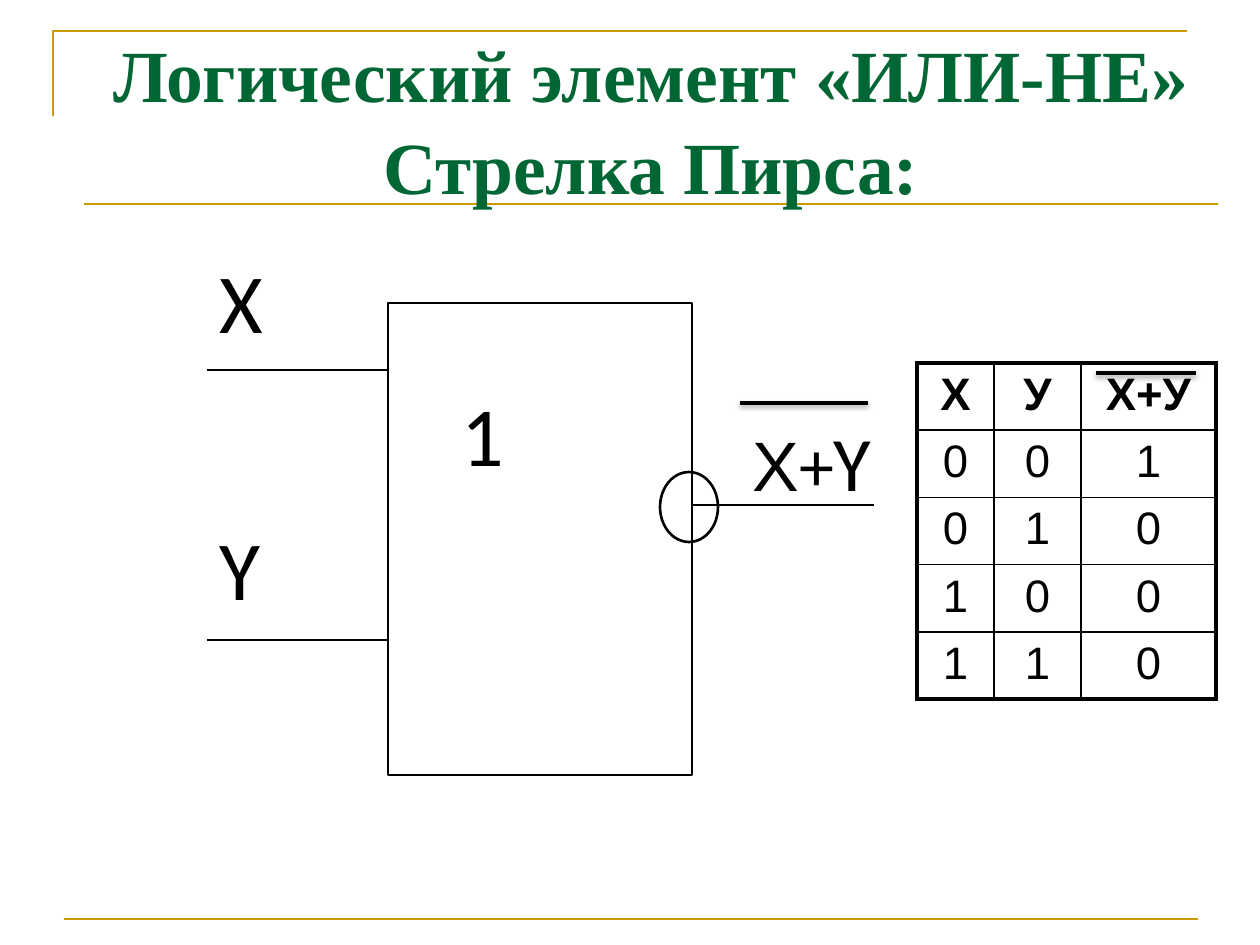
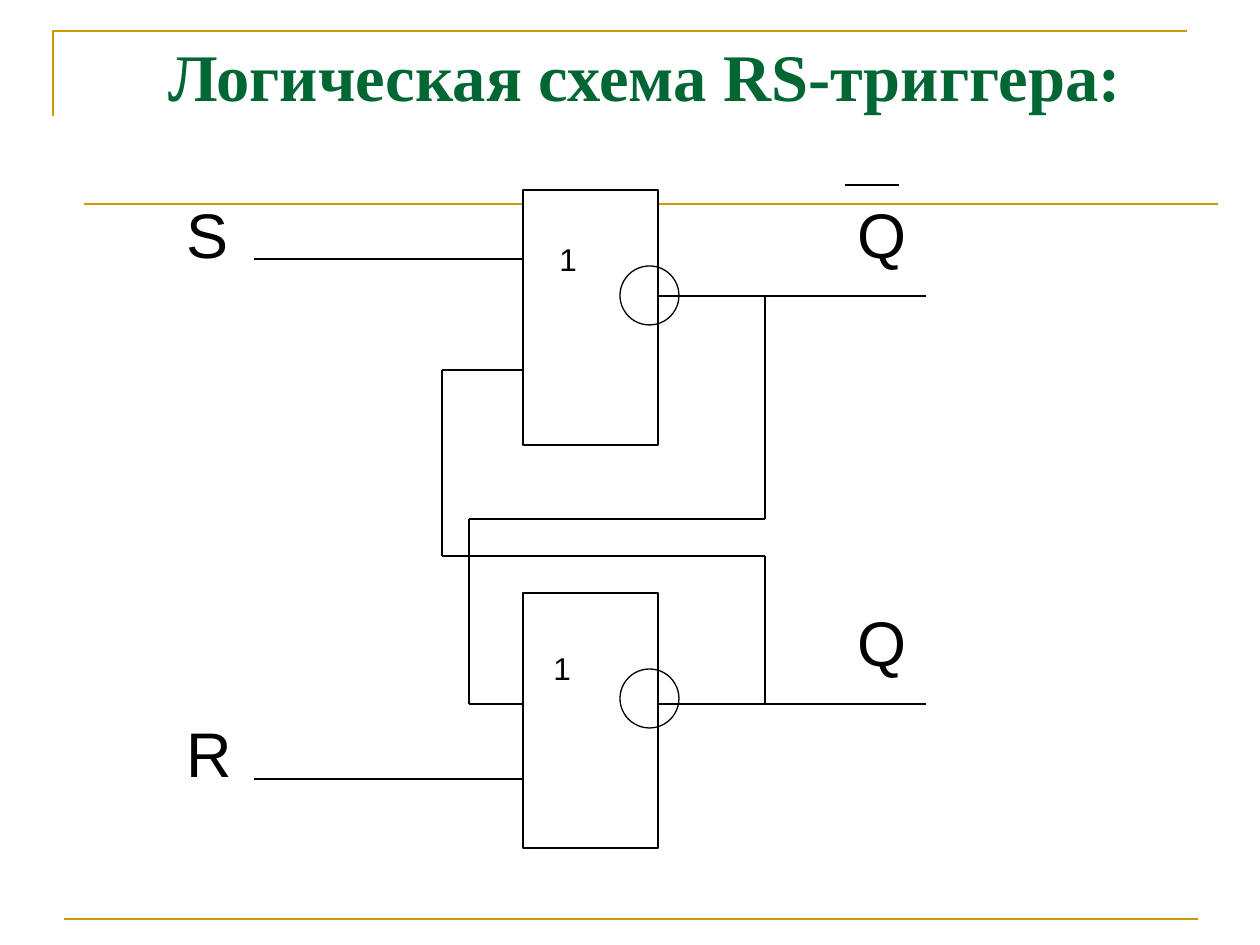
from itertools import pairwise

from lxml import etree
from pptx import Presentation
from pptx.dml.color import RGBColor
from pptx.enum.shapes import MSO_CONNECTOR, MSO_SHAPE
from pptx.enum.text import MSO_ANCHOR, PP_ALIGN
from pptx.oxml.ns import qn
from pptx.util import Emu, Pt

STRAIGHT = MSO_CONNECTOR.STRAIGHT
RECTANGLE, OVAL = MSO_SHAPE.RECTANGLE, MSO_SHAPE.OVAL
LEFT, CENTER, TOP = PP_ALIGN.LEFT, PP_ALIGN.CENTER, MSO_ANCHOR.TOP

SCALE = 914400 / 126
GOLD, GREEN, BLACK, WHITE = "CC9900", "006633", "000000", "FFFFFF"
SERIF, SANS, CALIBRI = "Times New Roman", "Arial", "Calibri"


def px(length):
    return Emu(round(length * SCALE))


def color(value):
    return RGBColor.from_string(value)


def style_run(run, size, font, hue=BLACK, bold=False):
    run.font.size = Pt(size)
    run.font.name = font
    run.font.bold = bold
    run.font.color.rgb = color(hue)


def add_line(slide, start, end, hue=BLACK, width=0.75, shadow=False):
    line = slide.shapes.add_connector(STRAIGHT, *map(px, (*start, *end)))
    line.line.color.rgb = color(hue)
    line.line.width = Pt(width)
    effects = etree.SubElement(line._element.spPr, qn("a:effectLst"))
    if shadow:
        outer = etree.SubElement(effects, qn("a:outerShdw"), blurRad="40000",
                                 dist="20000", dir="5400000", rotWithShape="0")
        black = etree.SubElement(outer, qn("a:srgbClr"), val=BLACK)
        etree.SubElement(black, qn("a:alpha"), val="38000")


def add_wire(slide, *points):
    for start, end in pairwise(points):
        add_line(slide, start, end)


def add_outline(slide, preset, box, fill=None, width=0.75):
    outline = slide.shapes.add_shape(preset, *map(px, box))
    outline.shadow.inherit = False
    outline.line.color.rgb = color(BLACK)
    outline.line.width = Pt(width)
    if fill:
        outline.fill.solid()
        outline.fill.fore_color.rgb = color(fill)
    else:
        outline.fill.background()


def add_label(slide, box, *parts):
    frame = slide.shapes.add_textbox(*map(px, box)).text_frame
    frame.word_wrap = True
    frame.margin_top = px(6 + parts[0][1] // 7)
    for text, size, font in parts:
        run = frame.paragraphs[0].add_run()
        run.text = text
        style_run(run, size, font)


def add_frame(slide):
    corner = slide.shapes.build_freeform(53, 116, scale=SCALE)
    corner.add_line_segments([(53, 31), (1187, 31)], close=False)
    bracket = corner.convert_to_shape()
    bracket.shadow.inherit = False
    bracket.fill.background()
    bracket.line.color.rgb = color(GOLD)
    bracket.line.width = Pt(1.5)
    for left, top in ((64, 919), (84, 204)):
        add_line(slide, (left, top), (left + 1134, top), GOLD, 1.5)


def add_title(slide, box, lines, size, align):
    frame = slide.shapes.add_textbox(*map(px, box)).text_frame
    frame.word_wrap = True
    frame.vertical_anchor = TOP
    frame.margin_top = px(16)
    frame.text = "\n".join(lines)
    for number, paragraph in enumerate(frame.paragraphs):
        paragraph.alignment = align
        paragraph.space_before = Pt(2 if number else 0)
        paragraph._p.get_or_add_pPr().set("indent", str(px(48)))
        style_run(paragraph.runs[0], size, SERIF, GREEN, True)


def add_pierce_gate(slide, left, top):
    def at(x, y):
        return left + x, top + y

    add_outline(slide, RECTANGLE, (*at(181, 66), 304, 472), WHITE)
    for y in (133, 403):
        add_wire(slide, at(0, y), at(181, y))
    add_wire(slide, at(485, 268), at(667, 268))
    for text, x, y in (("1", 242, 133), ("X", 0, 0), ("Y", 0, 268)):
        add_label(slide, (*at(x, y), 182, 269), (text, 48, CALIBRI))
    add_label(slide, (*at(533, 166), 182, 269),
              ("X", 40, SANS), ("+", 40, CALIBRI), ("Y", 44, CALIBRI))
    add_outline(slide, OVAL, (*at(453, 235), 58, 70), width=1.5)
    add_line(slide, at(533, 166), at(661, 166), width=2, shadow=True)


def add_border(cell, side, width):
    border = etree.SubElement(cell._tc.get_or_add_tcPr(), qn(f"a:ln{side}"),
                              w=str(Pt(width)))
    fill = etree.SubElement(border, qn("a:solidFill"))
    etree.SubElement(fill, qn("a:srgbClr"), val=BLACK)


def add_truth_table(slide, left, top):
    header = ("Х", "У", "Х+У")
    rows = [header] + [(str(x), str(y), str(int(not (x or y))))
                       for x in (0, 1) for y in (0, 1)]
    widths = (77, 87, 135)
    table = slide.shapes.add_table(len(rows), len(header), px(left), px(top),
                                   px(sum(widths)), px(67 * len(rows))).table
    table.first_row = table.horz_banding = False
    for column, width in zip(table.columns, widths):
        column.width = px(width)
    last_row, last_column = len(rows) - 1, len(header) - 1
    for r, row in enumerate(rows):
        for c, text in enumerate(row):
            cell = table.cell(r, c)
            cell.text = text
            paragraph = cell.text_frame.paragraphs[0]
            paragraph.alignment = CENTER
            paragraph.space_before = Pt(1)
            style_run(paragraph.runs[0], 26, SANS, bold=r == 0)
            edges = {"L": c == 0, "R": c == last_column,
                     "T": r == 0, "B": r == last_row}
            for side, outer in edges.items():
                add_border(cell, side, 2.25 if outer else 1)
            cell.fill.background()
    add_line(slide, (left + 179, top + 10), (left + 279, top + 10),
             width=2, shadow=True)


def add_nor_gate(slide, left, top, digit_x, digit_y):
    add_outline(slide, RECTANGLE, (left, top, 135, 255), WHITE)
    add_outline(slide, OVAL, (left + 97, top + 76, 59, 59))
    add_label(slide, (left + digit_x, top + digit_y, 49, 50), ("1", 18, SANS))


def add_trigger(slide, left, top):
    def at(x, y):
        return left + x, top + y

    add_nor_gate(slide, *at(349, 5), 24, 42)
    add_nor_gate(slide, *at(349, 408), 18, 48)
    for y in (74, 594):
        add_wire(slide, at(80, y), at(349, y))
    for y in (111, 519):
        add_wire(slide, at(484, y), at(752, y))
    add_wire(slide, at(349, 185), at(268, 185), at(268, 371),
             at(591, 371), at(591, 519))
    add_wire(slide, at(349, 519), at(295, 519), at(295, 334),
             at(591, 334), at(591, 111))
    for text, x, y in (("S", 0, 0), ("R", 0, 519), ("Q", 671, 0), ("Q", 671, 408)):
        add_label(slide, (*at(x, y), 107, 149), (text, 36, SANS))
    add_wire(slide, at(671, 0), at(725, 0))


def add_framed_slide(deck):
    slide = deck.slides.add_slide(deck.slide_layouts[6])
    add_frame(slide)
    return slide


def main():
    deck = Presentation()
    deck.slide_width, deck.slide_height = px(1260), px(945)

    pierce = add_framed_slide(deck)
    add_title(pierce, (29, 13, 1196, 190),
              ("Логический элемент «ИЛИ-НЕ»", "Стрелка Пирса:"), 42, CENTER)
    add_pierce_gate(pierce, 207, 237)
    add_truth_table(pierce, 917, 363)

    trigger = add_framed_slide(deck)
    add_title(trigger, (108, 19, 1108, 170),
              ("Логическая схема RS-триггера:",), 38, LEFT)
    add_trigger(trigger, 174, 185)

    deck.save("out.pptx")


if __name__ == "__main__":
    main()
